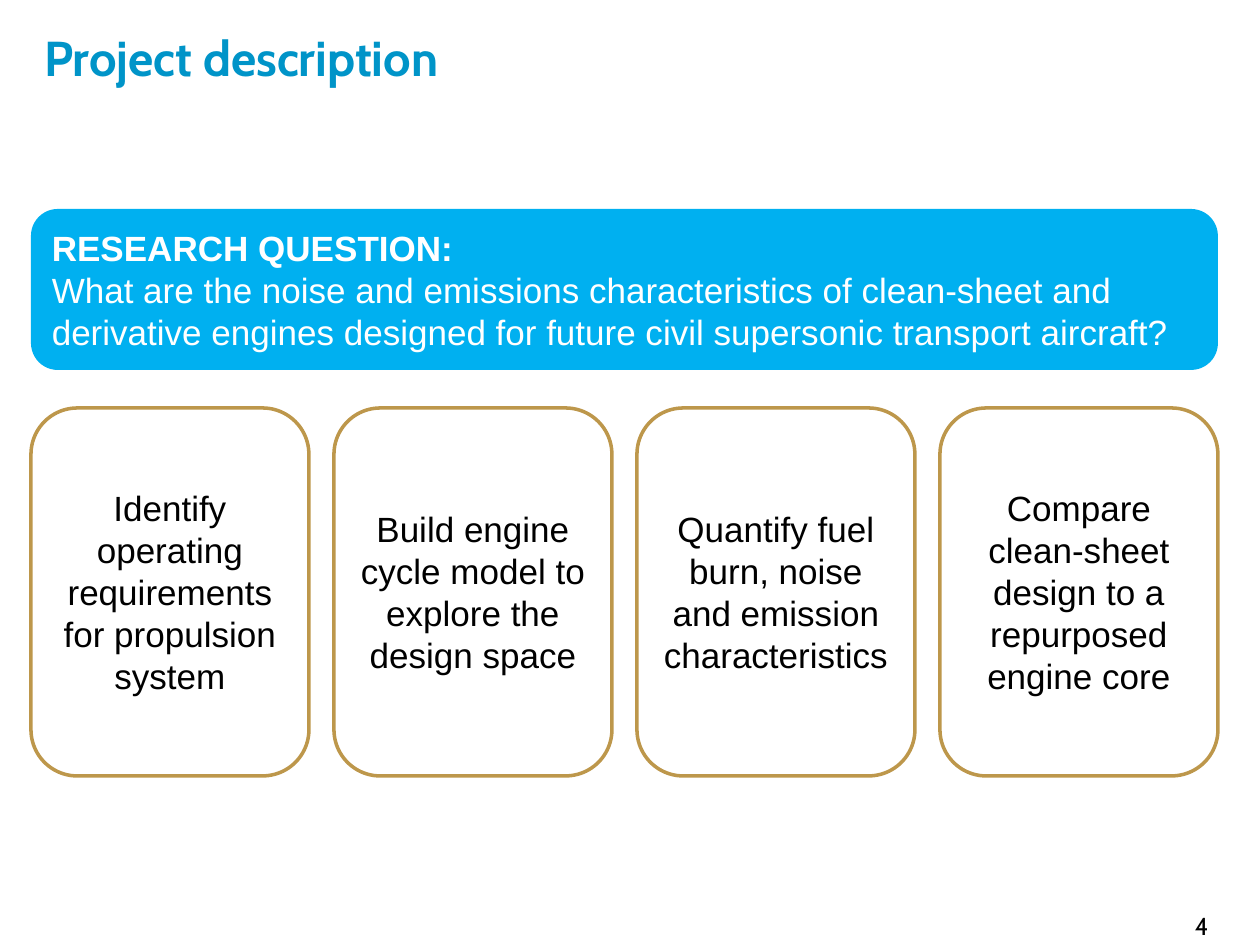
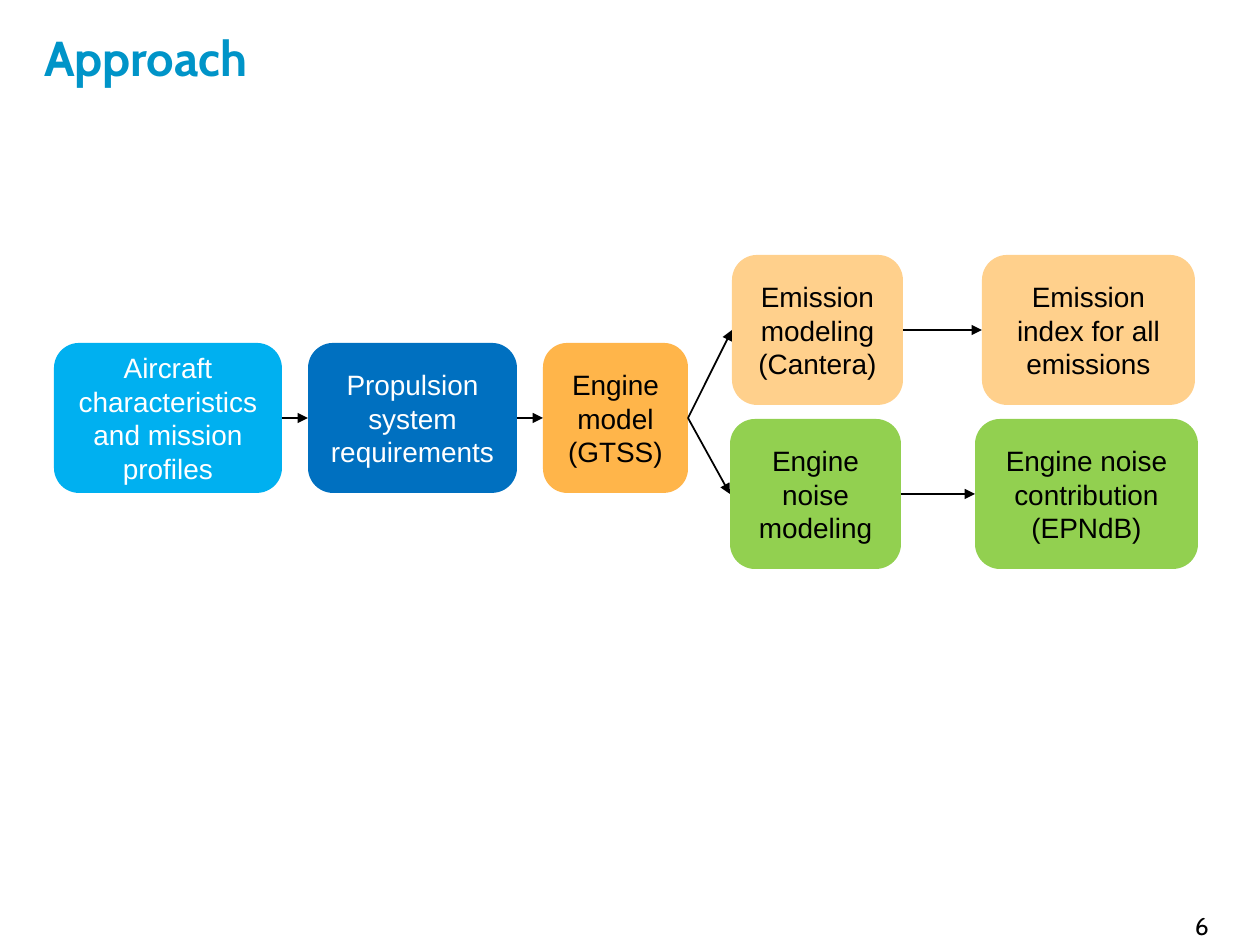
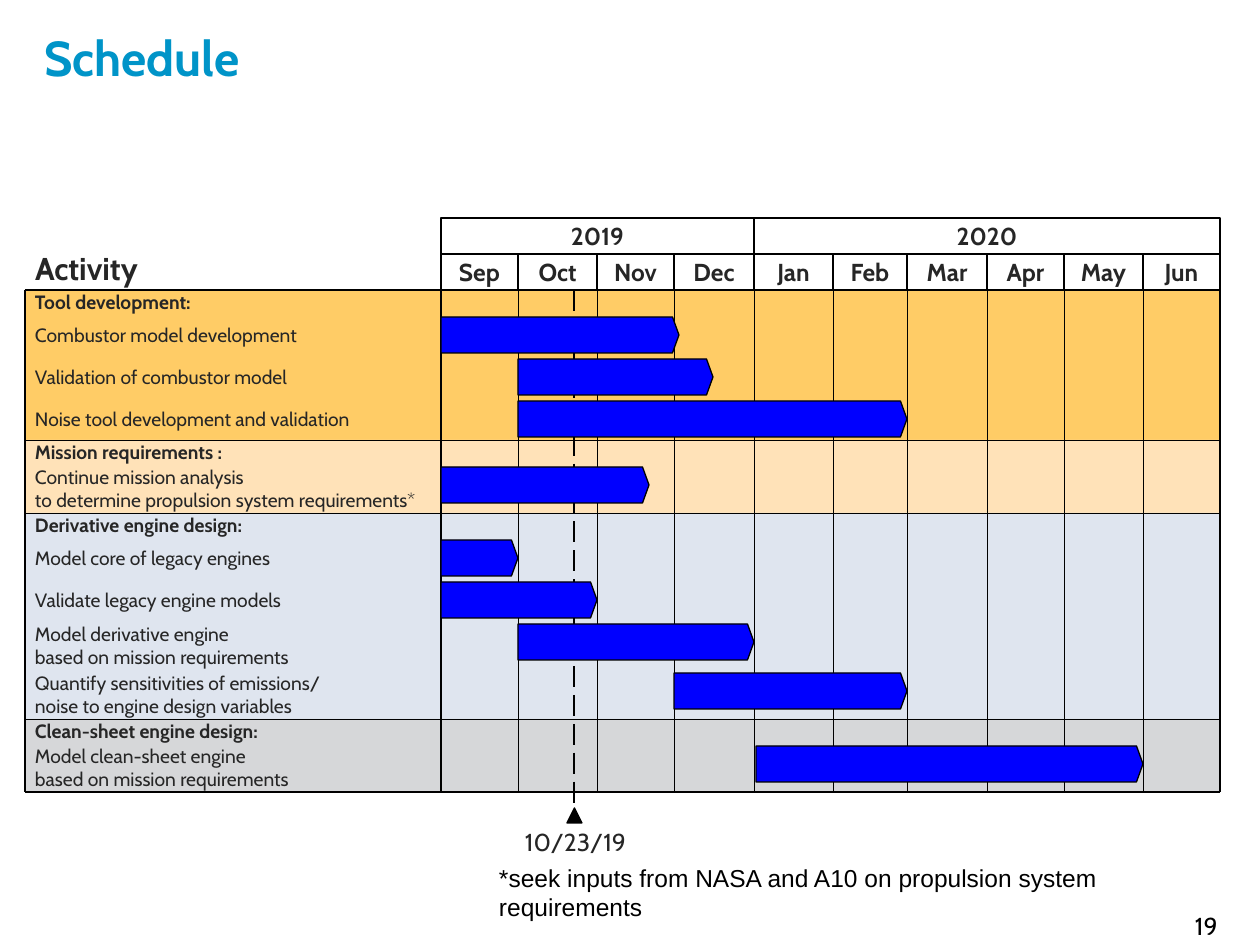
from collections import namedtuple
from itertools import accumulate

from lxml.etree import SubElement
from pptx import Presentation
from pptx.dml.color import RGBColor
from pptx.enum.dml import MSO_LINE
from pptx.enum.shapes import MSO_CONNECTOR, MSO_SHAPE
from pptx.enum.text import MSO_ANCHOR, PP_ALIGN
from pptx.oxml.ns import qn
from pptx.util import Emu, Pt

Type = namedtuple("Type", "face size color bold", defaults=(False,))


class Theme:
    black, white, ink = "000000", "FFFFFF", "262626"
    sky, blue, gold, bar = "00B0F0", "0070C0", "BD974B", "0000FF"
    orange, peach, green = "FFB54A", "FFD08C", "92D050"
    amber, cream, mist, gray = "FFCC66", "FFE2B8", "DFE5EF", "D6D7D9"

    title = Type("Cabin", 28, "0094C8", True)
    page = Type("Cabin", 14, black)
    lead = Type("Arial", 20, white, True)
    query = Type("Arial", 20, white)
    card = Type("Arial", 20, black)
    light = Type("Arial", 16, white)
    dark = Type("Arial", 16, black)
    head = Type("Cabin", 18, ink, True)
    month = Type("Cabin", 14, ink, True)
    date = Type("Cabin", 14, ink)
    group = Type("Cabin", 11, ink, True)
    task = Type("Cabin", 11, ink)
    note = Type("Arial", 14, black)

    hair, thin, flow, dash, frame = 0.25, 0.75, 1, 1.5, 2
    pad = (13, 6)


def px(n):
    """Turn px, 126 to the inch, into EMU."""
    return Emu(round(n * 914400 / 126))


def rgb(code):
    return RGBColor.from_string(code)


class Deck:
    def __init__(self, theme):
        self.theme = theme
        self.prs = Presentation()
        self.prs.slide_width, self.prs.slide_height = px(1260), px(945)
        self.slide = None

    def page(self, title, number, width=859):
        """Start a slide with its title and page number."""
        self.slide = self.prs.slides.add_slide(self.prs.slide_layouts[5])
        head = self.slide.shapes.title
        head.left, head.top, head.width, head.height = map(px, (31, 14, width, 97))
        self.label(head, [title], self.theme.title)
        head.text_frame.paragraphs[0].line_spacing = 0.8
        self.text(1182, 905, 62, 43, [number], self.theme.page,
                  pad=self.theme.pad, wrap=False)

    def label(self, shape, lines, *types, align=PP_ALIGN.LEFT,
              anchor=MSO_ANCHOR.MIDDLE, pad=Theme.pad, wrap=True):
        """Fill a shape with paragraphs; the last type serves all further lines."""
        frame = shape.text_frame
        frame.word_wrap, frame.vertical_anchor = wrap, anchor
        frame.margin_left = frame.margin_right = px(pad[0])
        frame.margin_top = frame.margin_bottom = px(pad[1])
        for i, line in enumerate(lines):
            para = frame.paragraphs[0] if i == 0 else frame.add_paragraph()
            para.text, para.alignment = line, align
            kind, font = types[min(i, len(types) - 1)], para.font
            font.name, font.size, font.bold = kind.face, Pt(kind.size), kind.bold
            font.color.rgb = rgb(kind.color)

    def text(self, x, y, w, h, lines, kind, anchor=MSO_ANCHOR.TOP,
             pad=(0, 0), wrap=True):
        box = self.slide.shapes.add_textbox(px(x), px(y), px(w), px(h))
        self.label(box, lines, kind, anchor=anchor, pad=pad, wrap=wrap)

    def shape(self, x, y, w, h, fill=None, line=None, width=Theme.thin,
              form=MSO_SHAPE.RECTANGLE):
        item = self.slide.shapes.add_shape(form, px(x), px(y), px(w), px(h))
        item.shadow.inherit = False
        if fill:
            item.fill.solid()
            item.fill.fore_color.rgb = rgb(fill)
        else:
            item.fill.background()
        if line:
            item.line.color.rgb, item.line.width = rgb(line), Pt(width)
        else:
            item.line.fill.background()
        return item

    def card(self, x, y, w, h, lines, *types, fill, line=None,
             align=PP_ALIGN.CENTER):
        item = self.shape(x, y, w, h, fill, line, self.theme.frame,
                          MSO_SHAPE.ROUNDED_RECTANGLE)
        self.label(item, lines, *types, align=align)
        return item

    def cell(self, x, y, w, h, name):
        item = self.shape(x, y, w, h, line=self.theme.black)
        self.label(item, [name], self.theme.month, align=PP_ALIGN.CENTER,
                   pad=(0, 4), wrap=False)

    def line(self, x1, y1, x2, y2, width):
        link = self.slide.shapes.add_connector(
            MSO_CONNECTOR.STRAIGHT, px(x1), px(y1), px(x2), px(y2))
        link.line.color.rgb, link.line.width = rgb(self.theme.black), Pt(width)
        SubElement(link._element.spPr, qn("a:effectLst"))
        return link

    def arrow(self, start, end):
        """Join the right side of one box to the left side of the next."""
        link = self.line(0, 0, 0, 0, self.theme.flow)
        link.begin_connect(start, 3)
        link.end_connect(end, 1)
        SubElement(link._element.spPr.find(qn("a:ln")), qn("a:tailEnd"),
                   type="triangle")


def project(deck):
    t = deck.theme
    deck.page("Project description", "4")
    left, span, wide = 31, 1187, 278
    deck.card(left, 209, span, 161, [
        "RESEARCH QUESTION:",
        "What are the noise and emissions characteristics of clean-sheet and "
        "derivative engines designed for future civil supersonic transport aircraft?",
    ], t.lead, t.query, fill=t.sky, align=PP_ALIGN.LEFT)
    steps = ["Identify operating requirements for propulsion system",
             "Build engine cycle model to explore the design space",
             "Quantify fuel burn, noise and emission characteristics",
             "Compare clean-sheet design to a repurposed engine core"]
    pitch = (span - wide) // (len(steps) - 1)
    for i, step in enumerate(steps):
        deck.card(left + i * pitch, 408, wide, 368, [step], t.card,
                  fill=t.white, line=t.gold)


def approach(deck):
    t = deck.theme
    deck.page("Approach", "6", 915)
    upper, middle, lower = 255, 343, 419
    boxes = [
        (54, middle, 228, t.sky, t.light, ["Aircraft characteristics and mission profiles"]),
        (308, middle, 209, t.blue, t.light, ["Propulsion system requirements"]),
        (543, middle, 145, t.orange, t.dark, ["Engine model", "(GTSS)"]),
        (732, upper, 171, t.peach, t.dark, ["Emission modeling", "(Cantera)"]),
        (730, lower, 171, t.green, t.dark, ["Engine noise modeling"]),
        (982, upper, 213, t.peach, t.dark, ["Emission index for all emissions"]),
        (975, lower, 223, t.green, t.dark, ["Engine noise contribution (EPNdB)"]),
    ]
    craft, needs, engine, gas, noise, index, level = [
        deck.card(x, y, w, 150, lines, kind, fill=fill)
        for x, y, w, fill, kind, lines in boxes]
    for start, end in [(craft, needs), (needs, engine), (engine, gas),
                       (engine, noise), (gas, index), (noise, level)]:
        deck.arrow(start, end)


MONTHS = {"Sep": 30, "Oct": 31, "Nov": 30, "Dec": 31, "Jan": 31,
          "Feb": 29, "Mar": 31, "Apr": 30, "May": 31, "Jun": 30}

# Each task: lines, first day, last day, counted from 1 September.
PLAN = [
    ("Tool development:", Theme.amber, [
        (["Combustor model development"], 0, 93),
        (["Validation of combustor model"], 30, 106),
        (["Noise tool development and validation"], 30, 182)]),
    ("Mission requirements :", Theme.cream, [
        (["Continue mission analysis",
          "to determine propulsion system requirements*"], 0, 81)]),
    ("Derivative engine design:", Theme.mist, [
        (["Model core of legacy engines"], 0, 30),
        (["Validate legacy engine models"], 0, 61),
        (["Model derivative engine", "based on mission requirements"], 30, 122),
        (["Quantify sensitivities of emissions/",
          "noise to engine design variables"], 91, 182)]),
    ("Clean-sheet engine design:", Theme.gray, [
        (["Model clean-sheet engine", "based on mission requirements"], 123, 274)]),
]


def schedule(deck):
    t = deck.theme
    deck.page("Schedule", "19")
    left, start, right, top, inset = 25, 441, 1220, 290, 35
    row, tall = 36, {1: 42, 2: 49}
    ends = list(accumulate(MONTHS.values(), initial=0))

    def at(day):
        return start + round(day * (right - start) / ends[-1])

    y, rules, labels, bars = top, [], [], []
    for name, fill, tasks in PLAN:
        rows = [([name], t.group, 24)]
        rows += [(lines, t.task, tall[len(lines)]) for lines, _, _ in tasks]
        spans = [None] + [task[1:] for task in tasks]
        for (lines, kind, high), span in zip(rows, spans):
            deck.shape(left, y, right - left, high, fill)
            labels.append((y, high, lines, kind))
            if span:
                bars.append((y + 3, *span))
            y += high
        rules.append(y)
    bottom = rules.pop()

    for year, first, last in [("2019", 0, 4), ("2020", 4, 10)]:
        x = at(ends[first])
        deck.cell(x, top - 2 * row, at(ends[last]) - x, row, year)
    for name, first, last in zip(MONTHS, ends, ends[1:]):
        deck.cell(at(first), top - row, at(last) - at(first), row, name)

    for day in ends[1:-1]:
        deck.line(at(day), top, at(day), bottom, t.hair)
    for x in (left, start, right):
        deck.line(x, top, x, bottom, t.thin)
    for rule in rules:
        deck.line(left, rule, right, rule, t.hair)
    for edge in (top, bottom):
        deck.line(left, edge, right, edge, t.thin)

    today = at(52)
    deck.line(today, top, today, 815, t.dash).line.dash_style = MSO_LINE.LONG_DASH
    for y, first, last in bars:
        bar = deck.shape(at(first), y, at(last) - at(first), row, t.bar, t.black,
                         form=MSO_SHAPE.PENTAGON)
        bar.adjustments[0] = 0.18
    deck.shape(today - 7, 808, 15, 15, t.black, t.black,
               form=MSO_SHAPE.ISOSCELES_TRIANGLE)

    for y, high, lines, kind in labels:
        size = 23 * len(lines)
        deck.text(inset, y + (high - size) // 2, start - inset, size, lines, kind)
    deck.text(inset, 249, 120, 38, ["Activity"], t.head, MSO_ANCHOR.BOTTOM)
    date = deck.shape(today - 49, 827, 99, 29, t.white)
    deck.label(date, ["10/23/19"], t.date, anchor=MSO_ANCHOR.TOP,
               pad=(0, 0), wrap=False)
    deck.text(486, 857, 750, 72, [
        "*seek inputs from NASA and A10 on propulsion system requirements",
    ], t.note, pad=t.pad)


def main():
    deck = Deck(Theme)
    project(deck)
    approach(deck)
    schedule(deck)
    deck.prs.save("out.pptx")


if __name__ == "__main__":
    main()
